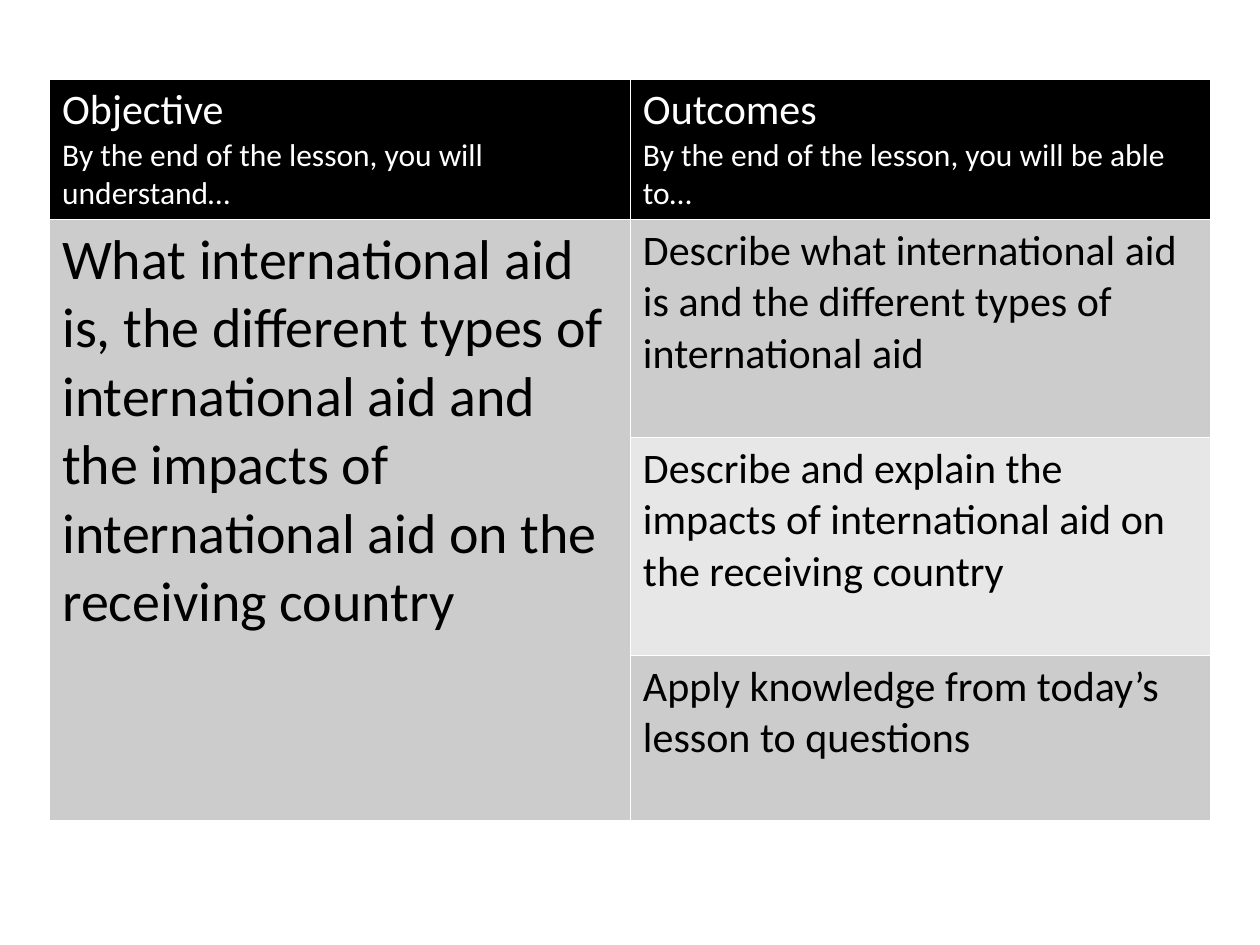
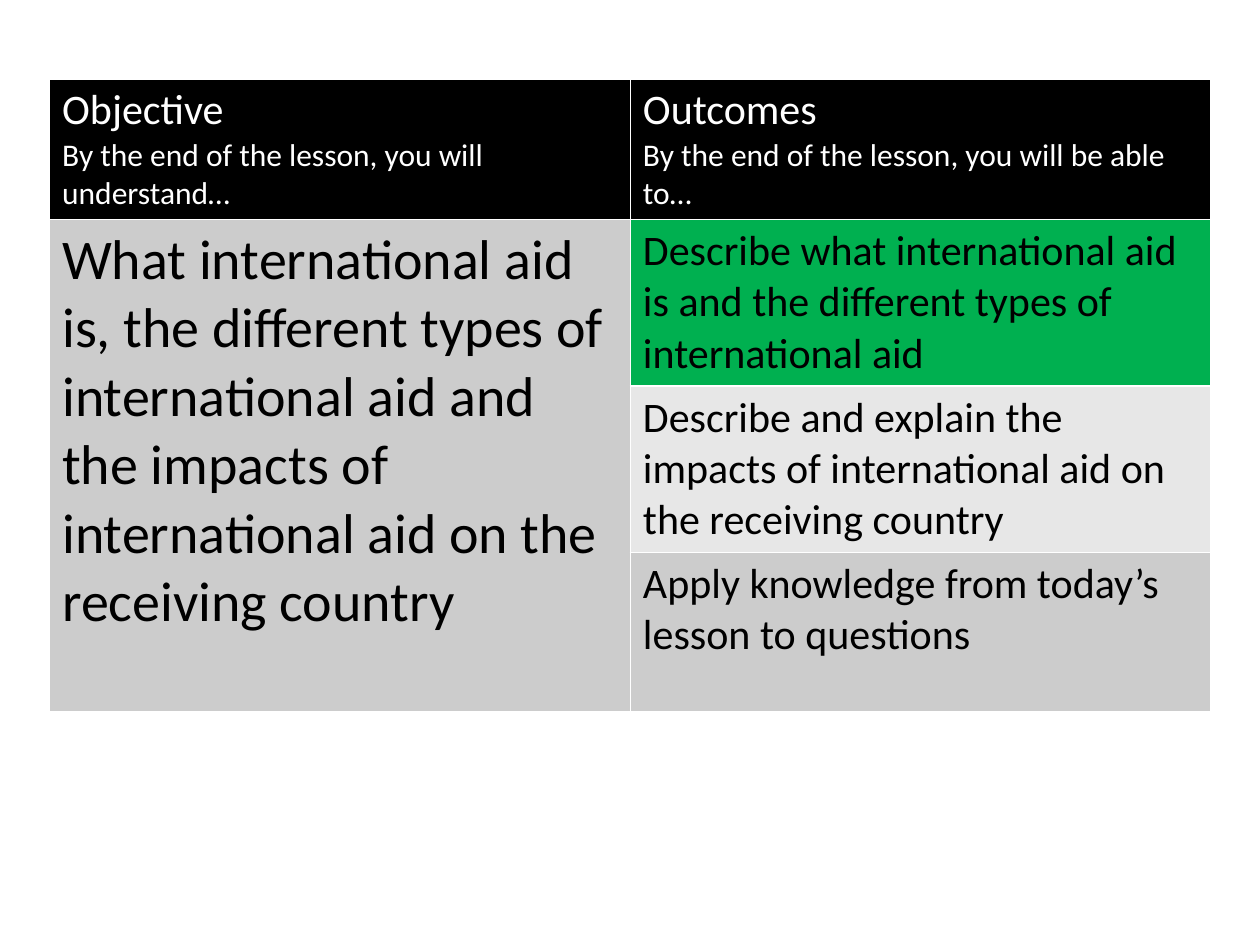
from pptx import Presentation
from pptx.dml.color import RGBColor
from pptx.util import Pt

COLORS = {"head": "000000", "head_text": "FFFFFF", "text": "000000",
          "band": "CCCCCC", "light": "E7E7E7", "done": "00B050"}
FONT = "Calibri"
TABLE_BOX = (28.35, 45, 663.8)
HEAD_HEIGHT = 80
HEADINGS = [("Objective", "By the end of the lesson, you will understand…"),
            ("Outcomes", "By the end of the lesson, you will be able to…")]
OBJECTIVE = ("What international aid is, the different types of international aid "
             "and the impacts of international aid on the receiving country")
OUTCOMES = ["Describe what international aid is and the different types of international aid",
            "Describe and explain the impacts of international aid on the receiving country",
            "Apply knowledge from today’s lesson to questions"]


def fill_cell(cell, lines, fill, color):
    """Fill a cell and write its (text, size) lines as paragraphs."""
    cell.fill.solid()
    cell.fill.fore_color.rgb = RGBColor.from_string(COLORS[fill])
    tf = cell.text_frame
    tf.text = "\n".join(text for text, _ in lines)
    for p, (_, size) in zip(tf.paragraphs, lines):
        p.font.name = FONT
        p.font.size = Pt(size)
        p.font.bold = False
        p.font.color.rgb = RGBColor.from_string(COLORS[color])


def add_lesson_table(s, box, outcome_heights, done=()):
    """Add the objective and outcomes table, marking finished outcomes."""
    left, top, width = box
    heights = [HEAD_HEIGHT, *outcome_heights]
    table = s.shapes.add_table(len(heights), len(HEADINGS), Pt(left), Pt(top),
                               Pt(width), Pt(sum(heights))).table
    for row, height in zip(table.rows, heights):
        row.height = Pt(height)
    for col, (title, lead) in enumerate(HEADINGS):
        fill_cell(table.cell(0, col), [(title, 24), (lead, 18)], "head", "head_text")
    objective = table.cell(1, 0)
    objective.merge(table.cell(len(OUTCOMES), 0))
    fill_cell(objective, [(OBJECTIVE, 32)], "band", "text")
    for i, outcome in enumerate(OUTCOMES):
        fill = "done" if i in done else ("band", "light")[i % 2]
        fill_cell(table.cell(i + 1, 1), [(outcome, 24)], fill, "text")


def main():
    """Build and save the two lesson slides."""
    prs = Presentation()
    prs.slide_width, prs.slide_height = Pt(720), Pt(540)
    for outcome_heights, done in [((124.5, 124.5, 94.5), ()), ((95, 95, 91), (0,))]:
        s = prs.slides.add_slide(prs.slide_layouts[6])
        add_lesson_table(s, TABLE_BOX, outcome_heights, done)
    prs.save("out.pptx")


if __name__ == "__main__":
    main()
